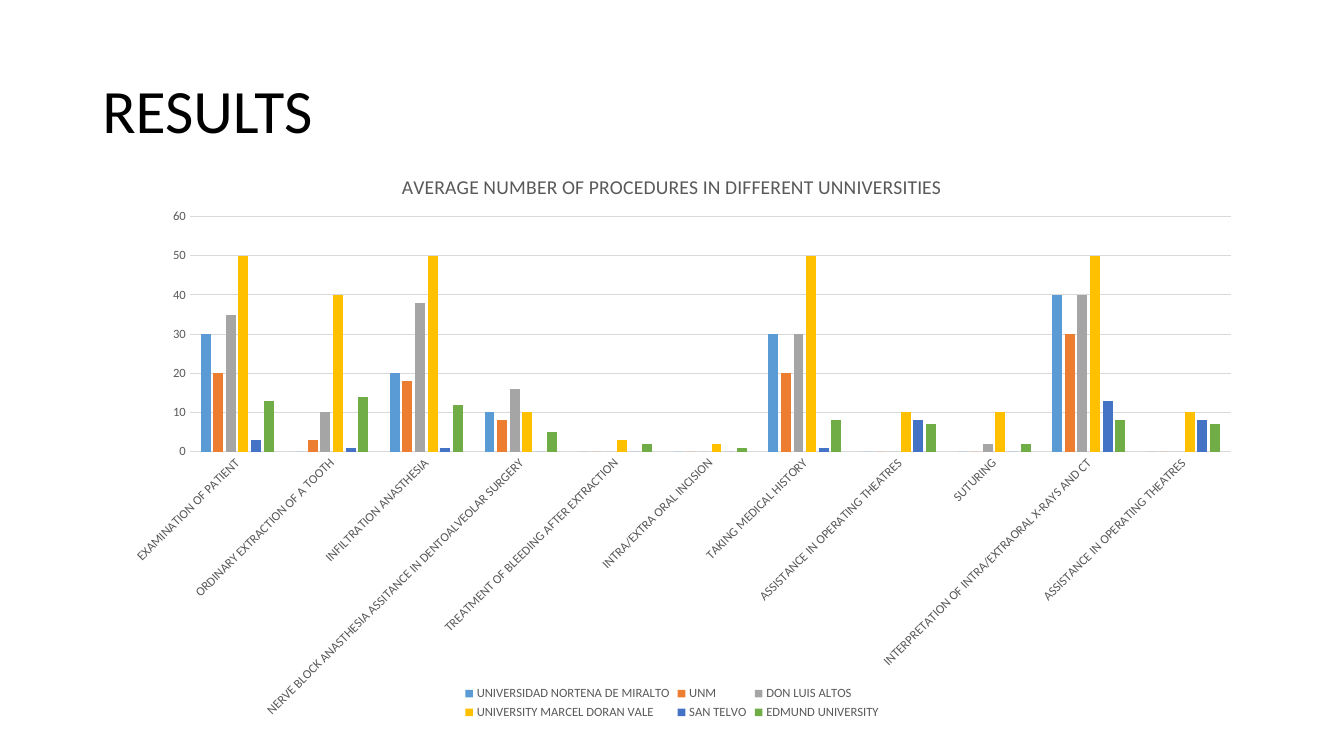
from lxml import etree
from pptx import Presentation
from pptx.chart.data import CategoryChartData
from pptx.dml.color import RGBColor
from pptx.enum.chart import XL_CHART_TYPE as ChartType, XL_LEGEND_POSITION as LegendPosition
from pptx.enum.chart import XL_TICK_MARK as TickMark
from pptx.enum.text import MSO_ANCHOR as Anchor
from pptx.oxml.ns import qn
from pptx.util import Pt

FONT = "Calibri"
GREY_TEXT, GRID = "595959", "D9D9D9"


def color(value):
    return RGBColor.from_string(value)


def write_text(frame, text, size, fill="000000", line_spacing=None):
    frame.text = text
    paragraph = frame.paragraphs[0]
    paragraph.line_spacing = line_spacing
    font = paragraph.runs[0].font
    font.name, font.size, font.bold = FONT, Pt(size), False
    font.color.rgb = color(fill)


presentation = Presentation()
presentation.slide_width, presentation.slide_height = Pt(960), Pt(540)
slide = presentation.slides.add_slide(presentation.slide_layouts[6])

# Slide title
title = slide.shapes.add_textbox(Pt(66), Pt(28.75), Pt(828), Pt(104.4)).text_frame
title.word_wrap = True
title.vertical_anchor = Anchor.MIDDLE
write_text(title, "RESULTS", size=44, line_spacing=0.9)

# Chart data
procedures = [
    "EXAMINATION OF PATIENT",
    "ORDINARY EXTRACTION OF A TOOTH",
    "INFILTRATION ANASTHESIA",
    "NERVE BLOCK ANASTHESIA ASSITANCE IN DENTOALVEOLAR SURGERY",
    "TREATMENT OF BLEEDING AFTER EXTRACTION",
    "INTRA/EXTRA ORAL INCISION",
    "TAKING MEDICAL HISTORY",
    "ASSISTANCE IN OPERATING THEATRES",
    "SUTURING",
    "INTERPRETATION OF INTRA/EXTRAORAL X-RAYS AND CT",
    "ASSISTANCE IN OPERATING THEATRES",
]
universities = [
    ("UNIVERSIDAD NORTENA DE MIRALTO", "5B9BD5", [30, 0, 20, 10, 0, 0, 30, 0, 0, 40, 0]),
    ("UNM", "ED7D31", [20, 3, 18, 8, 0, 0, 20, 0, 0, 30, 0]),
    ("DON LUIS ALTOS", "A5A5A5", [35, 10, 38, 16, 0, 0, 30, 0, 2, 40, 0]),
    ("UNIVERSITY MARCEL DORAN VALE", "FFC000", [50, 40, 50, 10, 3, 2, 50, 10, 10, 50, 10]),
    ("SAN TELVO", "4472C4", [3, 1, 1, 0, 0, 0, 1, 8, 0, 13, 8]),
    ("EDMUND UNIVERSITY", "70AD47", [13, 14, 12, 5, 2, 1, 8, 7, 2, 8, 7]),
]
data = CategoryChartData()
data.categories = procedures
for name, _, averages in universities:
    data.add_series(name, averages)

# Column chart
chart = slide.shapes.add_chart(
    ChartType.COLUMN_CLUSTERED, Pt(66), Pt(109.5), Pt(828), Pt(407.5), data
).chart
chart.font.name, chart.font.size = FONT, Pt(10)
write_text(
    chart.chart_title.text_frame,
    "AVERAGE NUMBER OF PROCEDURES IN DIFFERENT UNNIVERSITIES",
    size=14,
    fill=GREY_TEXT,
)
chart.chart_title.include_in_layout = False

plot = chart.plots[0]
plot.gap_width, plot.overlap = 219, -27
plot.vary_by_categories = False
for series, (_, fill, _) in zip(plot.series, universities):
    series.format.fill.solid()
    series.format.fill.fore_color.rgb = color(fill)

# Axes and legend
categories, values = chart.category_axis, chart.value_axis
chart.has_legend = True
chart.legend.position = LegendPosition.BOTTOM
chart.legend.include_in_layout = False
for font in (categories.tick_labels.font, values.tick_labels.font, chart.legend.font):
    font.name, font.size = FONT, Pt(9)
    font.color.rgb = color(GREY_TEXT)
for axis in (categories, values):
    axis.major_tick_mark = axis.minor_tick_mark = TickMark.NONE
values.minimum_scale, values.maximum_scale, values.major_unit = 0, 60, 10
values.format.line.fill.background()
for line in (categories.format.line, values.major_gridlines.format.line):
    line.color.rgb = color(GRID)
    line.width = Pt(0.75)

# Slanted category labels
label_body = categories._element.find(qn("c:txPr")).find(qn("a:bodyPr"))
label_body.set("rot", "-2700000")
label_body.set("vert", "horz")

# Fixed inner plot area
plot_area = chart._chartSpace.chart.plotArea
layout = plot_area.find(qn("c:layout"))
if layout is None:
    layout = etree.Element(qn("c:layout"))
    plot_area.insert(0, layout)
manual = etree.SubElement(layout, qn("c:manualLayout"))
for tag, value in (
    ("layoutTarget", "inner"), ("xMode", "edge"), ("yMode", "edge"),
    ("x", "0.084"), ("y", "0.111"), ("w", "0.898"), ("h", "0.412"),
):
    etree.SubElement(manual, qn(f"c:{tag}")).set("val", value)

presentation.save("out.pptx")
